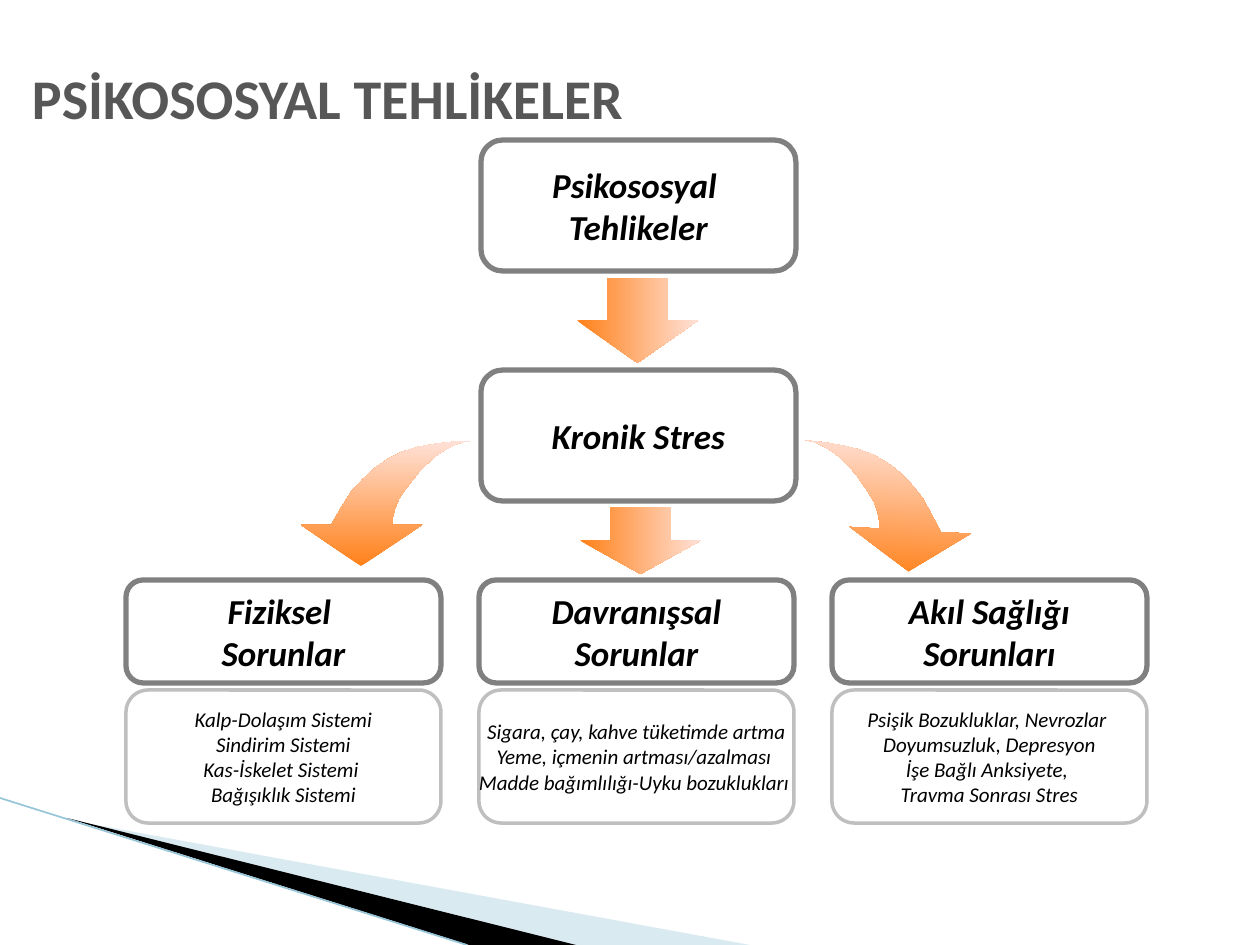
from lxml.etree import SubElement
from pptx import Presentation
from pptx.dml.color import RGBColor
from pptx.enum.shapes import MSO_CONNECTOR, MSO_SHAPE
from pptx.enum.text import MSO_ANCHOR, PP_ALIGN
from pptx.oxml.ns import qn
from pptx.util import Pt

EMU_PER_PX = 914400 / 126
CURVE = [
    (170, 0), (151, 1), (134, 3), (117, 6), (101, 11), (87, 18), (74, 27),
    (62, 38), (50, 51), (40, 67), (30, 84), (0, 84), (60, 125), (121, 84),
    (91, 84), (92, 76), (94, 68), (98, 58), (104, 49), (111, 40), (118, 31),
    (126, 23), (135, 15), (144, 9), (154, 4), (162, 1),
]
PROBLEMS = [
    (["Fiziksel ", "Sorunlar"],
     ["Kalp-Dolaşım Sistemi", "Sindirim Sistemi",
      "Kas-İskelet Sistemi ", "Bağışıklık Sistemi"]),
    (["Davranışsal", "Sorunlar"],
     ["Sigara, çay, kahve tüketimde artma", "Yeme, içmenin artması/azalması ",
      "Madde bağımlılığı-Uyku bozuklukları "]),
    (["Akıl Sağlığı", "Sorunları"],
     ["Psişik Bozukluklar, Nevrozlar ", "Doyumsuzluk, Depresyon",
      "İşe Bağlı Anksiyete, ", "Travma Sonrası Stres"]),
]


def px(length):
    return round(length * EMU_PER_PX)


def color(hex_value):
    return RGBColor.from_string(hex_value)


def write_text(frame, lines, size, ink="000000", bold=False, italic=False,
               align=PP_ALIGN.CENTER, wrap=False, spacing=None):
    frame.word_wrap = wrap
    frame.vertical_anchor = MSO_ANCHOR.MIDDLE
    for index, line in enumerate(lines):
        paragraph = frame.paragraphs[0] if index == 0 else frame.add_paragraph()
        paragraph.alignment = align
        paragraph.line_spacing = spacing
        run = paragraph.add_run()
        run.text = line
        run.font.name = "Calibri"
        run.font.size = Pt(size)
        run.font.bold = bold
        run.font.italic = italic
        run.font.color.rgb = color(ink)


def add_outline(slide, points):
    corners = [(px(x), px(y)) for x, y in points]
    builder = slide.shapes.build_freeform(*corners[0], scale=1.0)
    builder.add_line_segments(corners[1:], close=True)
    outline = builder.convert_to_shape()
    outline.shadow.inherit = False
    outline.line.fill.background()
    return outline


def fill_orange(arrow, angle):
    arrow.shadow.inherit = False
    arrow.line.fill.background()
    arrow.fill.gradient()
    arrow.fill.gradient_angle = angle
    for stop, shade in zip(arrow.fill.gradient_stops, ("FF8119", "FFE1D8")):
        stop.color.rgb = color(shade)


def add_swoosh(slide, left, top):
    for points, shade, alpha in (
        ([(69, 22), (750, 147), (575, 147)], "A0CBDC", 40),
        ([(67, 20), (576, 147), (469, 147)], "000000", 100),
    ):
        band = add_outline(slide, [(left + x, top + y) for x, y in points])
        band.fill.solid()
        band.fill.fore_color.rgb = color(shade)
        if alpha < 100:
            tint = band.fill._xPr.find(qn("a:solidFill"))[0]
            SubElement(tint, qn("a:alpha"), val=str(alpha * 1000))
    edge = slide.shapes.add_connector(
        MSO_CONNECTOR.STRAIGHT, px(left), px(top), px(left + 467), px(top + 147))
    edge.line.color.rgb = color("97C5D8")
    edge.line.width = Pt(0.95)
    SubElement(edge._element.spPr, qn("a:effectLst"))


def add_title(slide, left, top, width, height):
    title = slide.shapes.title
    title.left, title.top = px(left), px(top)
    title.width, title.height = px(width), px(height)
    title.text_frame.margin_left = title.text_frame.margin_right = 0
    write_text(title.text_frame, ["PSİKOSOSYAL TEHLİKELER"], 32, ink="575757",
               bold=True, align=PP_ALIGN.LEFT, wrap=True, spacing=0.9)


def add_box(slide, left, top, width, height, lines, border="808080",
            border_width=3, size=20, bold=True):
    box = slide.shapes.add_shape(
        MSO_SHAPE.ROUNDED_RECTANGLE, px(left), px(top), px(width), px(height))
    box.shadow.inherit = False
    box.fill.background()
    box.line.color.rgb = color(border)
    box.line.width = Pt(border_width)
    write_text(box.text_frame, lines, size, bold=bold, italic=True)


def add_down_arrow(slide, left, top, width, height):
    arrow = slide.shapes.add_shape(
        MSO_SHAPE.DOWN_ARROW, px(left), px(top), px(width), px(height))
    fill_orange(arrow, 0)


def add_curved_arrow(slide, left, top, mirrored=False, rotation=0):
    span = max(x for x, _ in CURVE)
    arrow = add_outline(slide, [
        (left + (span - x if mirrored else x), top + y) for x, y in CURVE])
    arrow.rotation = rotation
    fill_orange(arrow, 90)


def add_causes(slide, left, top, width):
    add_box(slide, left, top, width, 131, ["Psikososyal ", "Tehlikeler"])
    add_down_arrow(slide, left + 96, top + 138, 121, 85)
    add_box(slide, left, top + 230, width, 131, ["Kronik Stres"])
    add_down_arrow(slide, left + 99, top + 367, 121, 67)
    add_curved_arrow(slide, left - 180, top + 301)
    add_curved_arrow(slide, left + 321, top + 305, mirrored=True, rotation=3.2)


def add_problems(slide, left, top, width, step):
    for index, (heading, details) in enumerate(PROBLEMS):
        column = left + index * step
        add_box(slide, column, top, width, 103, heading)
        add_box(slide, column, top + 110, width, 133, details,
                border="BFBFBF", border_width=2, size=12, bold=False)


def main():
    presentation = Presentation()
    presentation.slide_width, presentation.slide_height = px(1260), px(945)
    slide = presentation.slides.add_slide(presentation.slide_layouts[5])
    add_swoosh(slide, 0, 798)
    add_title(slide, 32, 57, 1215, 89)
    add_causes(slide, 481, 140, 315)
    add_problems(slide, 126, 580, 315, 353)
    presentation.save("out.pptx")


if __name__ == "__main__":
    main()
